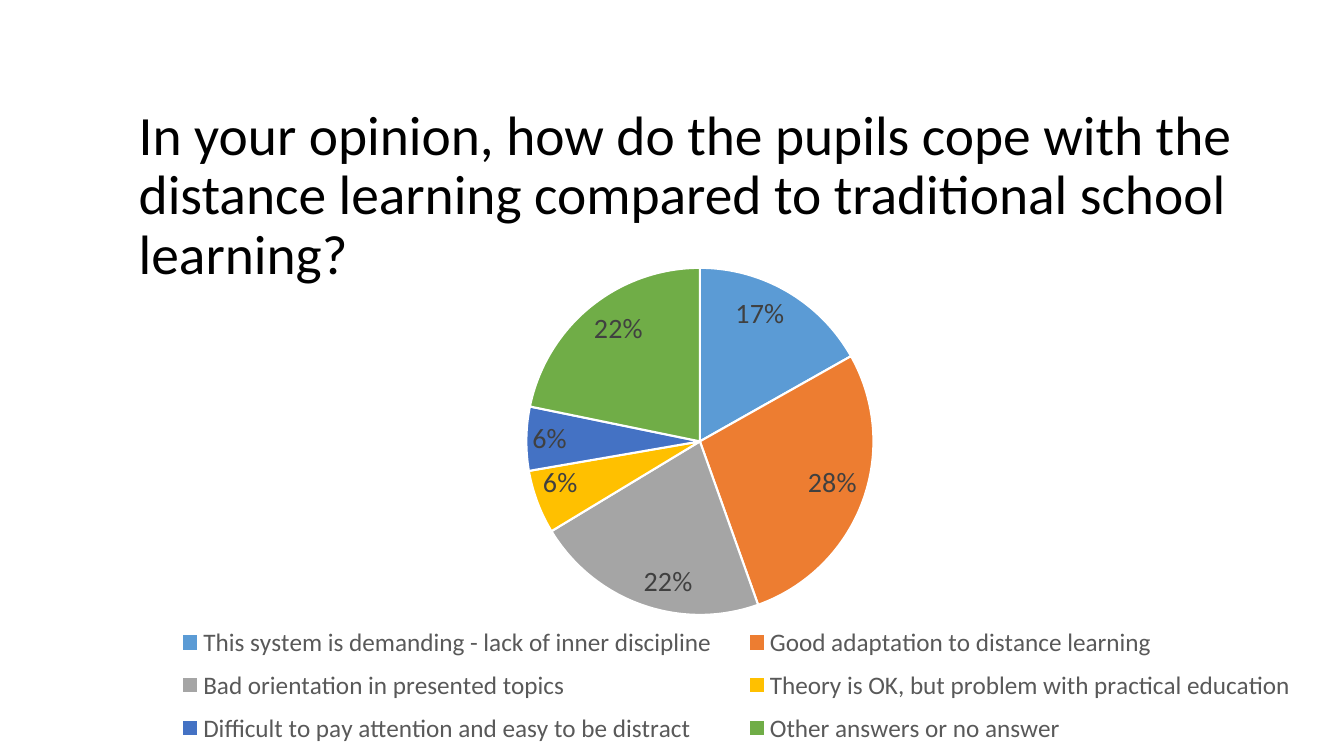
from typing import NamedTuple

from pptx import Presentation
from pptx.chart.data import CategoryChartData as Data
from pptx.dml.color import RGBColor
from pptx.enum.chart import XL_CHART_TYPE as Kind
from pptx.enum.chart import XL_LABEL_POSITION as Spot
from pptx.enum.chart import XL_LEGEND_POSITION as Side
from pptx.enum.text import MSO_ANCHOR as Anchor
from pptx.oxml import parse_xml
from pptx.oxml.ns import nsdecls
from pptx.util import Pt


class Slice(NamedTuple):
    label: str
    value: int
    color: str


class Box(NamedTuple):
    x: float
    y: float
    w: float
    h: float


TITLE = "In your opinion, how do the pupils cope with the distance learning compared to traditional school learning?"
SLICES = [
    Slice("This system is demanding - lack of inner discipline", 17, "5B9BD5"),
    Slice("Good adaptation to distance learning", 28, "ED7D31"),
    Slice("Bad orientation in presented topics", 22, "A5A5A5"),
    Slice("Theory is OK, but problem with practical education", 6, "FFC000"),
    Slice("Difficult to pay attention and easy to be distract", 6, "4472C4"),
    Slice("Other answers or no answer", 22, "70AD47"),
]


def rgb(code: str) -> RGBColor:
    return RGBColor.from_string(code)


def style(font, size: float, color: str) -> None:
    font.name = "Calibri"
    font.size = Pt(size)
    font.color.rgb = rgb(color)


def points(box: Box) -> list:
    return [Pt(n) for n in box]


def layout(box: Box, inner: bool = False):
    target = '<c:layoutTarget val="inner"/>' if inner else ""
    modes = "".join(f'<c:{n}Mode val="edge"/>' for n in "xy")
    sizes = "".join(f'<c:{n} val="{v}"/>' for n, v in zip("xywh", box))
    return parse_xml(
        f'<c:layout {nsdecls("c")}><c:manualLayout>{target}{modes}{sizes}'
        "</c:manualLayout></c:layout>"
    )


def add_title(slide, box: Box) -> None:
    frame = slide.shapes.add_textbox(*points(box)).text_frame
    frame.word_wrap = True
    frame.vertical_anchor = Anchor.MIDDLE
    frame.text = TITLE
    line = frame.paragraphs[0]
    line.line_spacing = 0.9
    style(line.runs[0].font, 39.6, "000000")


def add_pie(slide, box: Box) -> None:
    data = Data()
    data.categories = [s.label for s in SLICES]
    data.add_series("Series 1", [s.value for s in SLICES])
    chart = slide.shapes.add_chart(Kind.PIE, *points(box), data).chart
    chart.has_title = False
    style(chart.font, 10, "000000")

    chart.has_legend = True
    legend = chart.legend
    legend.position = Side.RIGHT
    legend.include_in_layout = False
    style(legend.font, 18, "595959")
    root = legend._element
    for old in root.xpath("c:layout"):
        root.remove(old)
    root.xpath("c:legendPos")[0].addnext(layout(Box(0.02, 0.74, 0.96, 0.26)))

    area = chart._chartSpace.chart.plotArea
    for old in area.xpath("c:layout"):
        area.remove(old)
    area.insert(0, layout(Box(0.05, 0.1, 0.84, 0.64), True))

    plot = chart.plots[0]
    plot.vary_by_categories = True
    plot.has_data_labels = True
    labels = plot.data_labels
    labels.show_value = False
    labels.show_percentage = True
    labels.number_format = "0%"
    labels.number_format_is_linked = False
    labels.position = Spot.INSIDE_END
    style(labels.font, 20, "404040")

    for i, part in enumerate(SLICES):
        look = plot.series[0].points[i].format
        look.fill.solid()
        look.fill.fore_color.rgb = rgb(part.color)
        look.line.color.rgb = rgb("FFFFFF")
        look.line.width = Pt(1.5)


def main() -> None:
    deck = Presentation()
    deck.slide_width, deck.slide_height = Pt(960), Pt(540)
    slide = deck.slides.add_slide(deck.slide_layouts[6])
    add_title(slide, Box(92, 114.5, 828, 52.5))
    add_pie(slide, Box(92, 152.6, 868, 387.4))
    deck.save("out.pptx")


if __name__ == "__main__":
    main()
